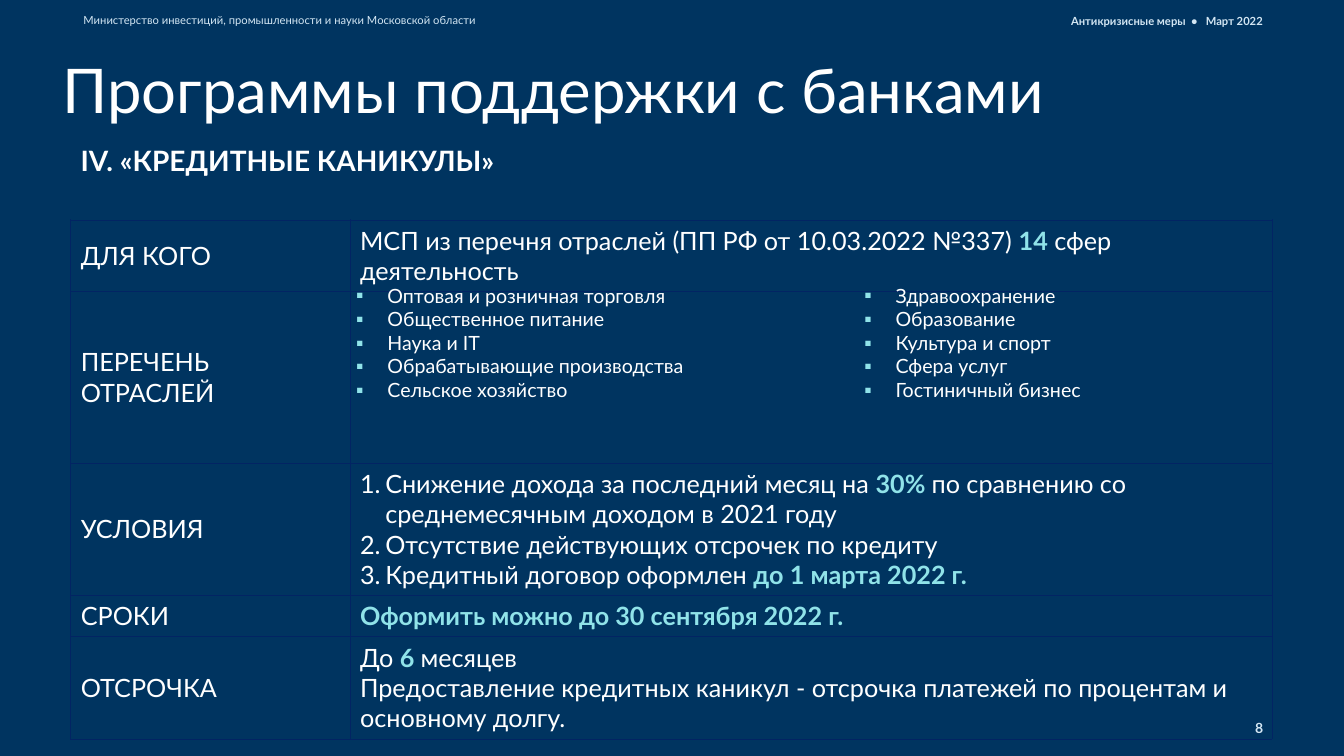
from pptx import Presentation
from pptx.dml.color import RGBColor
from pptx.enum.text import MSO_ANCHOR, MSO_AUTO_SIZE, PP_ALIGN
from pptx.util import Pt
from lxml.etree import SubElement
from pptx.oxml.ns import qn

NAVY = RGBColor(0x00, 0x34, 0x60)
WHITE = RGBColor(0xFF, 0xFF, 0xFF)
AQUA = RGBColor(0x90, 0xE3, 0xE9)
PALE = RGBColor(0xD3, 0xE6, 0xF3)
EDGE = RGBColor(0x02, 0x24, 0x63)


def write(frame, lines, size, color=WHITE, bold=False, align=PP_ALIGN.LEFT, space=1.0, mark=None):
    frame.word_wrap = True
    frame.auto_size = MSO_AUTO_SIZE.NONE
    for i, line in enumerate(lines):
        para = frame.paragraphs[0] if i == 0 else frame.add_paragraph()
        props = para._p.get_or_add_pPr()
        if mark:
            indent = Pt(22.5 if mark == "▪" else 18)
            props.set("marL", str(indent))
            props.set("indent", str(-indent))
        if mark == "▪":
            tint = SubElement(props, qn("a:buClr"))
            SubElement(tint, qn("a:srgbClr"), val=str(AQUA))
            SubElement(props, qn("a:buFont"), typeface="Lato")
            SubElement(props, qn("a:buChar"), char=mark)
        elif mark:
            SubElement(props, qn("a:buFont"), typeface="+mj-lt")
            SubElement(props, qn("a:buAutoNum"), type=mark)
        para.alignment = align
        para.line_spacing = space
        para.space_before = Pt(0)
        para.font.name = "Lato"
        para.font.size = Pt(size)
        para.font.bold = bold
        para.font.color.rgb = color
        for j, part in enumerate(line.split("*")):
            if part:
                run = para.add_run()
                run.text = part
                if j % 2:
                    run.font.bold = True
                    run.font.color.rgb = AQUA


def place(shape, left, top, width, height):
    shape.left, shape.top = Pt(left), Pt(top)
    shape.width, shape.height = Pt(width), Pt(height)


deck = Presentation()
deck.slide_width, deck.slide_height = Pt(960), Pt(540)
slide = deck.slides.add_slide(deck.slide_layouts[3])
slide.background.fill.solid()
slide.background.fill.fore_color.rgb = NAVY

title, *lists = slide.placeholders
place(title, 37.5, 26, 860, 81)
title.text_frame.vertical_anchor = MSO_ANCHOR.MIDDLE
write(title.text_frame, ["Программы поддержки с банками"], 44, space=0.9)

LEFT, RIGHT = PP_ALIGN.LEFT, PP_ALIGN.RIGHT
TOP, MID = MSO_ANCHOR.TOP, MSO_ANCHOR.MIDDLE
labels = [
    ((52.5, 6, 407, 17), "Министерство инвестиций, промышленности и науки Московской области",
     8, PALE, False, LEFT, 1.0, TOP),
    ((585.5, 8.5, 324, 13), "Антикризисные меры  •   Март 2022", 8, PALE, True, RIGHT, 1.0, MID),
    ((693.5, 511, 216, 18), "8", 10, PALE, True, RIGHT, 1.0, MID),
    ((50.5, 97, 833, 37.5), "IV. «КРЕДИТНЫЕ КАНИКУЛЫ»", 20, WHITE, True, LEFT, 0.9, MID),
]
for area, text, size, color, bold, align, space, anchor in labels:
    box = slide.shapes.add_textbox(*map(Pt, area))
    box.text_frame.vertical_anchor = anchor
    write(box.text_frame, [text], size, color, bold, align, space)

rows = [
    (51, "ДЛЯ КОГО", ["МСП из перечня отраслей (ПП РФ от 10.03.2022 №337) *14* сфер деятельность"], None),
    (122.5, "ПЕРЕЧЕНЬ ОТРАСЛЕЙ", [], None),
    (94.5, "УСЛОВИЯ", [
        "Снижение дохода за последний месяц на *30% *по сравнению со среднемесячным доходом в 2021 году",
        "Отсутствие действующих отсрочек по кредиту",
        "Кредитный договор оформлен *до 1 марта 2022 г.*",
    ], "arabicPeriod"),
    (29, "СРОКИ", ["*Оформить можно до 30 сентября 2022 г.*"], None),
    (73, "ОТСРОЧКА", [
        "До *6 *месяцев",
        "Предоставление кредитных каникул - отсрочка платежей по процентам и основному долгу.",
    ], None),
]
total = sum(row[0] for row in rows)
grid = slide.shapes.add_table(len(rows), 2, Pt(50.5), Pt(157), Pt(858), Pt(total)).table
grid.first_row = grid.horz_banding = False
grid.columns[0].width, grid.columns[1].width = Pt(199.5), Pt(658.5)
for i, (height, head, lines, mark) in enumerate(rows):
    grid.rows[i].height = Pt(height)
    for j, (texts, sign) in enumerate([([head], None), (lines, mark)]):
        cell = grid.cell(i, j)
        cell.vertical_anchor = MID
        cell.margin_left = cell.margin_right = Pt(7.2)
        cell.margin_top = cell.margin_bottom = Pt(4)
        props = cell._tc.get_or_add_tcPr()
        for side in ("a:lnL", "a:lnR", "a:lnT", "a:lnB"):
            edge = SubElement(props, qn(side), w=str(Pt(0.5)))
            fill = SubElement(edge, qn("a:solidFill"))
            SubElement(fill, qn("a:srgbClr"), val=str(EDGE))
        cell.fill.background()
        write(cell.text_frame, texts, 18, mark=sign)

fields = [
    ["Оптовая и розничная торговля", "Общественное питание", "Наука и IT",
     "Обрабатывающие производства", "Сельское хозяйство"],
    ["Здравоохранение", "Образование", "Культура и спорт", "Сфера услуг", "Гостиничный бизнес"],
]
for body, left, names in zip(lists, (247, 610), fields):
    place(body, left, 199, 287, 101.5)
    write(body.text_frame, names, 14, mark="▪")
    slide.shapes._spTree.append(body._element)

deck.save("out.pptx")
